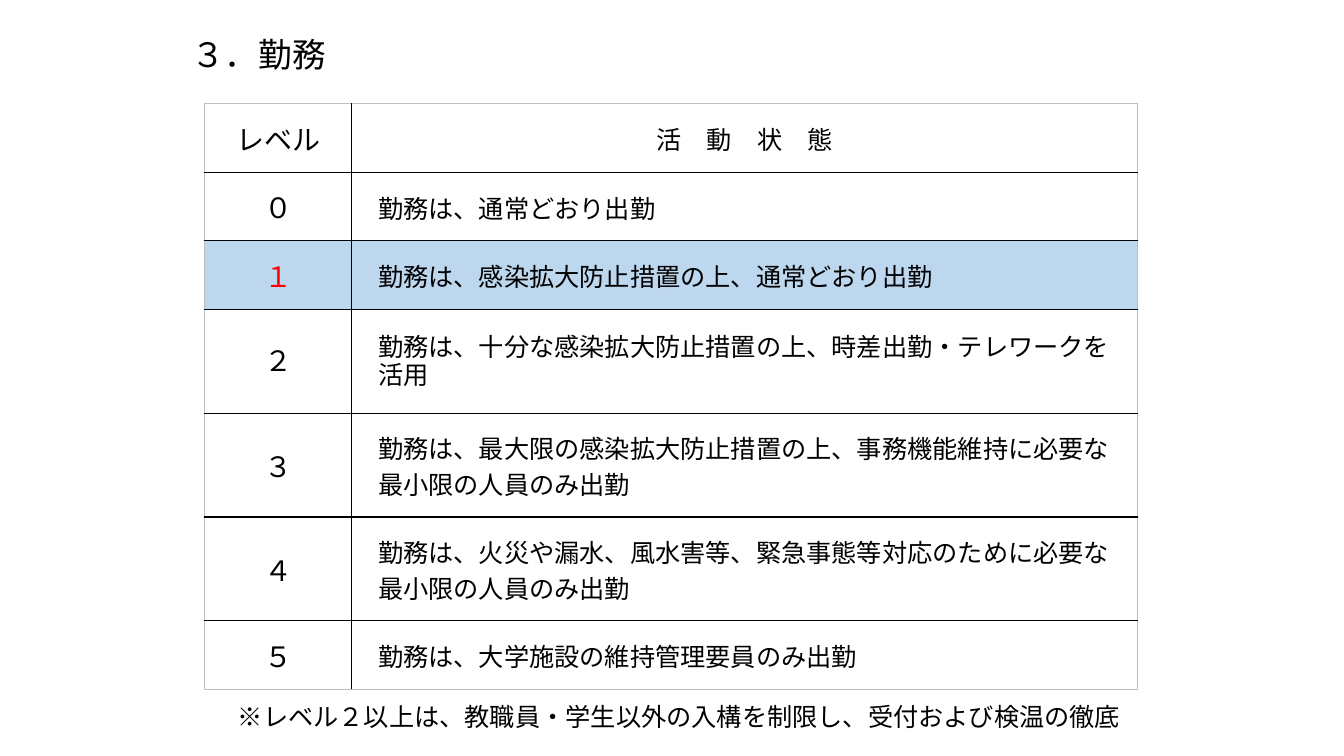
import pptx
import pptx.util
import pptx.dml.color
import pptx.enum.lang
import pptx.enum.shapes
import pptx.enum.text
import pptx.oxml.ns
import lxml.etree

Inches = pptx.util.Inches
Pt = pptx.util.Pt
RGBColor = pptx.dml.color.RGBColor
ALIGN = pptx.enum.text.PP_ALIGN
MIDDLE = pptx.enum.text.MSO_ANCHOR.MIDDLE
qn = pptx.oxml.ns.qn

# Content
TITLE = "３．勤務"
HEADER = ("レベル", "活　動　状　態")
LEVELS = [
    ("０", ["勤務は、通常どおり出勤"]),
    ("１", ["勤務は、感染拡大防止措置の上、通常どおり出勤"]),
    ("２", ["勤務は、十分な感染拡大防止措置の上、時差出勤・テレワークを", "活用"]),
    ("３", ["勤務は、最大限の感染拡大防止措置の上、事務機能維持に必要な",
           "最小限の人員のみ出勤"]),
    ("４", ["勤務は、火災や漏水、風水害等、緊急事態等対応のために必要な",
           "最小限の人員のみ出勤"]),
    ("５", ["勤務は、大学施設の維持管理要員のみ出勤"]),
]
NOTE = "※レベル２以上は、教職員・学生以外の入構を制限し、受付および検温の徹底"
CURRENT_LEVEL = "１"
ARIAL_LEVEL = "２"

# Look
BLACK = RGBColor(0x00, 0x00, 0x00)
RED = RGBColor(0xFF, 0x00, 0x00)
LIGHT_BLUE = RGBColor(0xBD, 0xD7, 0xEE)
GREY = RGBColor(0xBF, 0xBF, 0xBF)
GOTHIC = "Noto Sans CJK JP"
ARIAL = "Arial"

# Layout in inches
TABLE_LEFT, TABLE_TOP = 2.03, 1.03
COLUMNS = (1.46, 7.79)
ROW_BY_LINES = {1: 0.68, 2: 1.03}
TEXT_INDENT = 0.26


def write(frame, lines, size, align=ALIGN.LEFT, color=BLACK, font=GOTHIC):
    for index, line in enumerate(lines):
        para = frame.paragraphs[0] if index == 0 else frame.add_paragraph()
        para.alignment = align
        span = para.add_run()
        span.text = line
        span.font.size = Pt(size)
        span.font.name = font
        span.font.color.rgb = color
        span.font.language_id = pptx.enum.lang.MSO_LANGUAGE_ID.JAPANESE
        east_asian = lxml.etree.Element(qn("a:ea"), typeface=font)
        span.font._element.find(qn("a:latin")).addnext(east_asian)


def set_borders(cell, colors):
    properties = cell._tc.get_or_add_tcPr()
    for index, (side, color) in enumerate(colors.items()):
        line = lxml.etree.Element(qn("a:ln" + side), w=str(Pt(1)))
        fill = lxml.etree.SubElement(line, qn("a:solidFill"))
        lxml.etree.SubElement(fill, qn("a:srgbClr"), val=str(color))
        properties.insert(index, line)


deck = pptx.Presentation()
deck.slide_width, deck.slide_height = Inches(13.33), Inches(7.5)
page = deck.slides.add_slide(deck.slide_layouts[6])

# Title
title = page.shapes.add_textbox(Inches(1.8), Inches(0.29), Inches(2.01), Inches(0.5))
title.text_frame.word_wrap = True
write(title.text_frame, [TITLE], 24)

# Table of levels
rows = [(HEADER[0], [HEADER[1]])] + LEVELS
heights = [ROW_BY_LINES[len(lines)] for _, lines in rows]
frame = page.shapes.add_table(
    len(rows), len(COLUMNS), Inches(TABLE_LEFT), Inches(TABLE_TOP),
    Inches(sum(COLUMNS)), Inches(sum(heights)))
table = frame.table
table.first_row = table.horz_banding = False
for column, width in zip(table.columns, COLUMNS):
    column.width = Inches(width)

last_row = len(rows) - 1
for row, (level, lines) in enumerate(rows):
    table.rows[row].height = Inches(heights[row])
    font = ARIAL if level == ARIAL_LEVEL else GOTHIC
    current = level == CURRENT_LEVEL
    level_cell, state_cell = table.cell(row, 0), table.cell(row, 1)

    write(level_cell.text_frame, [level], 20, ALIGN.CENTER,
          RED if current else BLACK, font)
    write(state_cell.text_frame, lines, 18,
          ALIGN.CENTER if row == 0 else ALIGN.LEFT, BLACK, font)
    if row > 0:
        state_cell.margin_left = Inches(TEXT_INDENT)
        state_cell.margin_right = state_cell.margin_top = Inches(0.01)
        state_cell.margin_bottom = 0

    for col, cell in enumerate((level_cell, state_cell)):
        cell.vertical_anchor = MIDDLE
        if current:
            cell.fill.solid()
            cell.fill.fore_color.rgb = LIGHT_BLUE
        else:
            cell.fill.background()
        set_borders(cell, {
            "L": GREY if col == 0 else BLACK,
            "R": BLACK if col == 0 else GREY,
            "T": GREY if row == 0 else BLACK,
            "B": GREY if row == last_row else BLACK,
        })

# Note under the table
note = page.shapes.add_shape(
    pptx.enum.shapes.MSO_SHAPE.FLOWCHART_PROCESS,
    Inches(TABLE_LEFT), Inches(6.85), Inches(9.41), Inches(0.51))
note.shadow.inherit = False
note.fill.background()
note.line.fill.background()
note.text_frame.word_wrap = True
note.text_frame.vertical_anchor = MIDDLE
write(note.text_frame, [NOTE], 18, ALIGN.CENTER)

deck.save("out.pptx")
